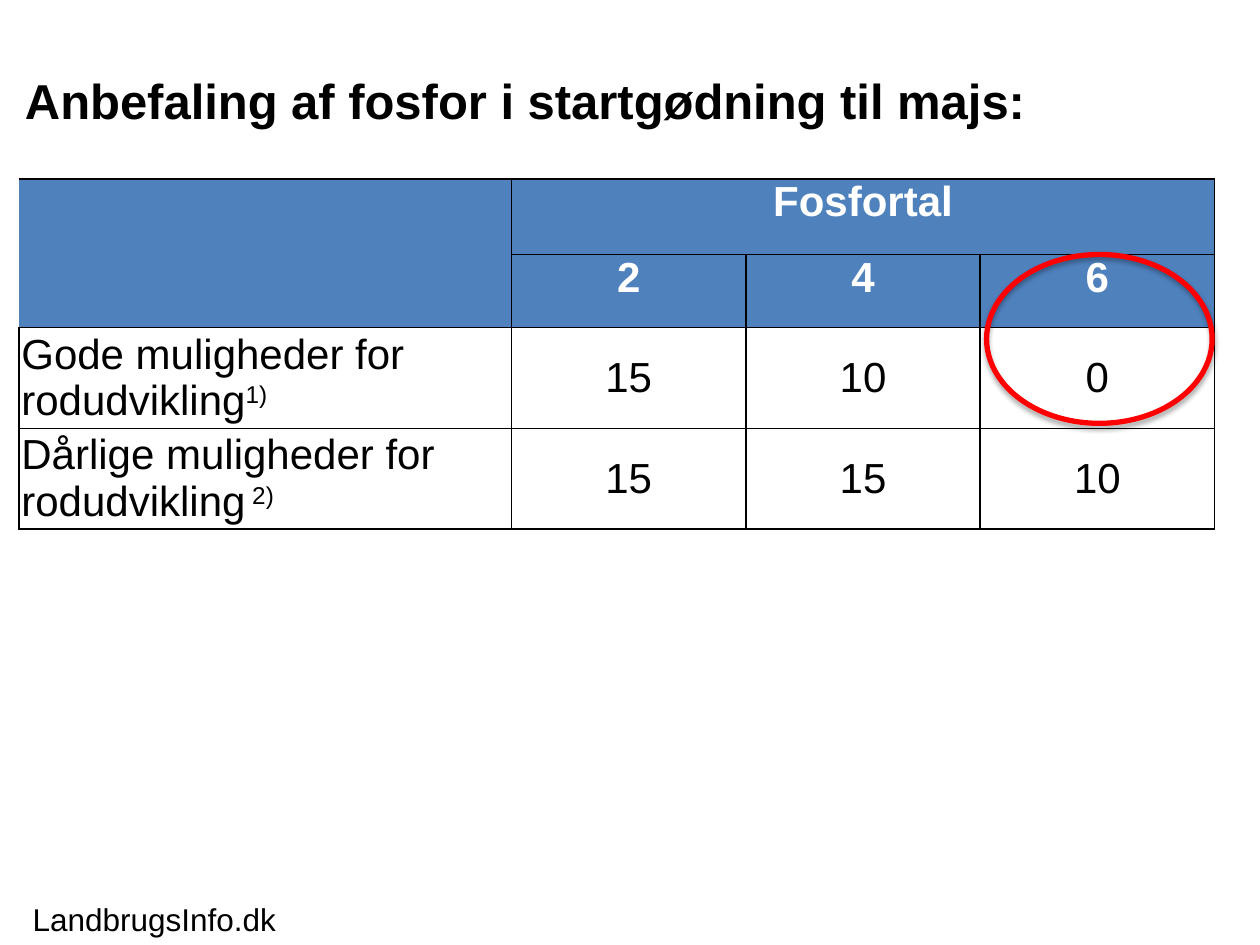
from dataclasses import dataclass

from pptx import Presentation, util as u
from pptx.dml.color import RGBColor
from pptx.enum import shapes, text
from pptx.oxml import parse_xml
from pptx.oxml.ns import nsdecls

BLACK = RGBColor(0x00, 0x00, 0x00)
WHITE = RGBColor(0xFF, 0xFF, 0xFF)
BLUE = RGBColor(0x4F, 0x81, 0xBD)
RED = RGBColor(0xFF, 0x00, 0x00)

COLUMNS = (3.91, 1.86, 1.86, 1.86)
ROWS = (0.6, 0.58, 0.8, 0.8)
TABLE_LEFT, TABLE_TOP = 0.15, 1.42
HEADER_ROWS = 2


@dataclass(frozen=True)
class Label:
    words: str
    left: float
    top: float
    width: float
    height: float
    size: int
    bold: bool = False


@dataclass(frozen=True)
class Entry:
    words: str
    note: str = ""


LABELS = (
    Label("Anbefaling af fosfor i startgødning til majs:", 0.1, 0.51, 8.23, 0.57, 28, True),
    Label("LandbrugsInfo.dk", 0.16, 7.09, 2.15, 0.4, 18),
)
ENTRIES = (
    (Entry(""), Entry("Fosfortal"), Entry(""), Entry("")),
    (Entry(""), Entry("2"), Entry("4"), Entry("6")),
    (Entry("Gode muligheder for rodudvikling", "1)"), Entry("15"), Entry("10"), Entry("0")),
    (Entry("Dårlige muligheder for rodudvikling", " 2)"), Entry("15"), Entry("15"), Entry("10")),
)


def apply(target, values: dict) -> None:
    for name, value in values.items():
        setattr(target, name, value)


def add_span(para, words: str, size: int, bold: bool, color: RGBColor):
    span = para.add_run()
    span.text = words
    apply(span.font, {"name": "Arial", "size": u.Pt(size), "bold": bold})
    span.font.color.rgb = color
    return span


def add_label(page, label: Label) -> None:
    box = page.shapes.add_textbox(
        *map(u.Inches, (label.left, label.top, label.width, label.height)))
    box.text_frame.word_wrap = False
    add_span(box.text_frame.paragraphs[0], label.words, label.size, label.bold, BLACK)


def add_borders(cell, open_left: bool) -> None:
    """Draw thin black cell edges; border elements must precede the fill."""
    properties = cell._tc.get_or_add_tcPr()
    for position, side in enumerate("LRTB"):
        hidden = open_left and side == "L"
        paint = "<a:noFill/>" if hidden else (
            f'<a:solidFill><a:srgbClr val="{BLACK}"/></a:solidFill>')
        edge = parse_xml(f'<a:ln{side} {nsdecls("a")} w="{u.Pt(1)}">{paint}</a:ln{side}>')
        properties.insert(position, edge)


def fill_cell(cell, entry: Entry, row: int, column: int) -> None:
    header = row < HEADER_ROWS
    apply(cell, {
        "margin_left": u.Inches(0.02), "margin_right": u.Inches(0.02),
        "margin_top": 0, "margin_bottom": 0,
        "vertical_anchor": text.MSO_ANCHOR.TOP if header else text.MSO_ANCHOR.MIDDLE,
    })
    if header:
        cell.fill.solid()
        cell.fill.fore_color.rgb = BLUE
    else:
        cell.fill.background()
    add_borders(cell, open_left=header and column == 0)
    para = cell.text_frame.paragraphs[0]
    para.alignment = text.PP_ALIGN.CENTER if column else text.PP_ALIGN.LEFT
    color = WHITE if header else BLACK
    if entry.words:
        add_span(para, entry.words, 24, header, color)
    if entry.note:
        note = add_span(para, entry.note, 24, header, color)
        note._r.get_or_add_rPr().set("baseline", "30000")


def add_phosphorus_table(page) -> None:
    frame = page.shapes.add_table(
        len(ROWS), len(COLUMNS),
        *map(u.Inches, (TABLE_LEFT, TABLE_TOP, sum(COLUMNS), sum(ROWS))))
    table = frame.table
    apply(table, {"first_row": False, "horz_banding": False})
    for column, width in zip(table.columns, COLUMNS):
        column.width = u.Inches(width)
    for row, height in zip(table.rows, ROWS):
        row.height = u.Inches(height)
    for row, entries in enumerate(ENTRIES):
        for column, entry in enumerate(entries):
            fill_cell(table.cell(row, column), entry, row, column)
    table.cell(0, 0).merge(table.cell(HEADER_ROWS - 1, 0))
    table.cell(0, 1).merge(table.cell(0, len(COLUMNS) - 1))


def add_highlight(page) -> None:
    """Ring the last column's header and first value, with a soft shadow."""
    ring = page.shapes.add_shape(
        shapes.MSO_SHAPE.OVAL, *map(u.Inches, (7.83, 2.02, 1.79, 1.34)))
    ring.fill.background()
    ring.line.color.rgb = RED
    ring.line.width = u.Pt(3)
    ring.shadow.inherit = False
    effects = ring._element.spPr.find(
        "{http://schemas.openxmlformats.org/drawingml/2006/main}effectLst")
    effects.append(parse_xml(
        f'<a:outerShdw {nsdecls("a")} blurRad="{u.Pt(3.1)}" dist="{u.Pt(1.8)}" '
        f'dir="5400000" rotWithShape="0"><a:srgbClr val="{BLACK}">'
        '<a:alpha val="35000"/></a:srgbClr></a:outerShdw>'))


def main() -> None:
    deck = Presentation()
    apply(deck, {"slide_width": u.Inches(10), "slide_height": u.Inches(7.5)})
    page = deck.slides.add_slide(deck.slide_layouts[6])
    add_phosphorus_table(page)
    add_highlight(page)
    for label in LABELS:
        add_label(page, label)
    deck.save("out.pptx")


if __name__ == "__main__":
    main()
